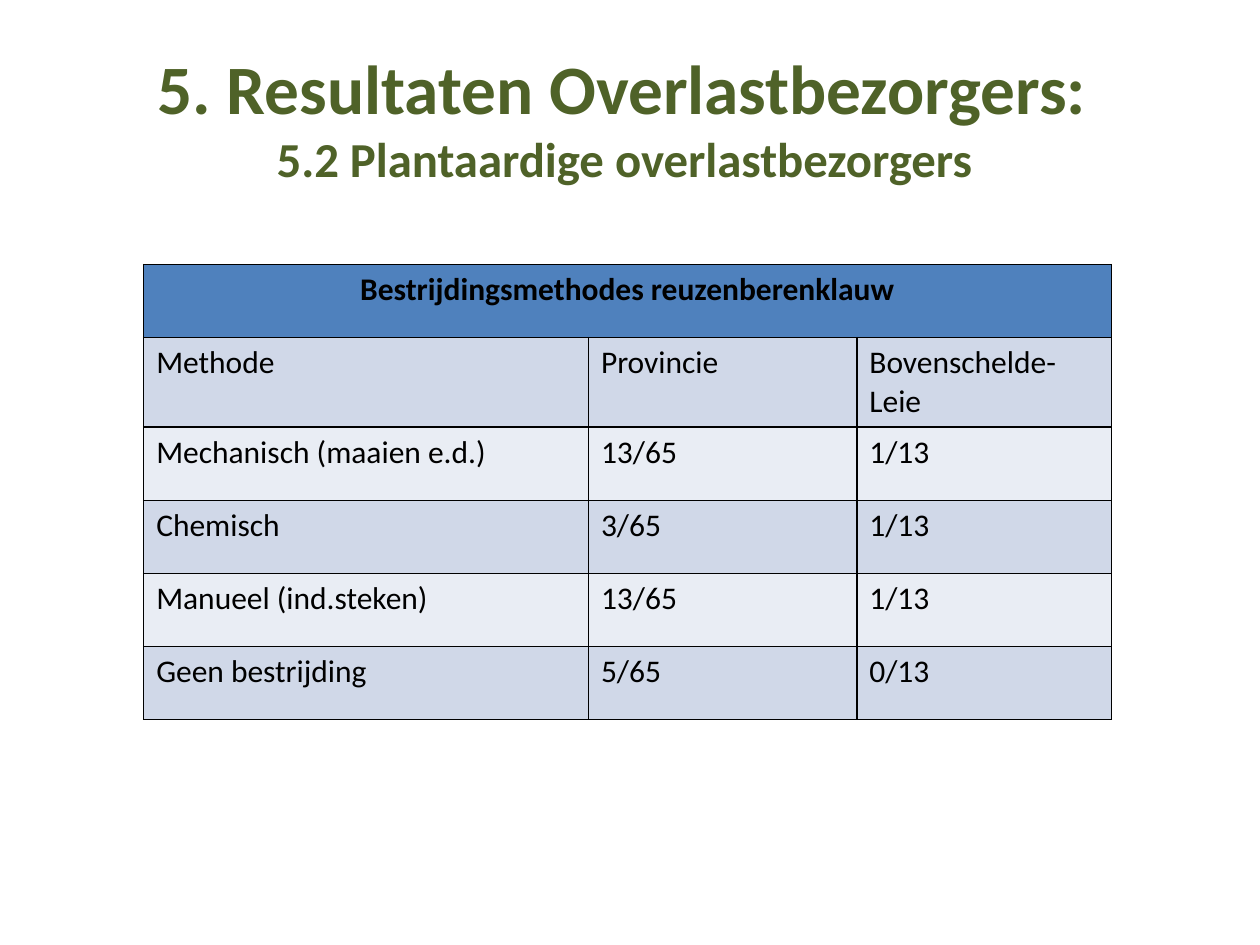
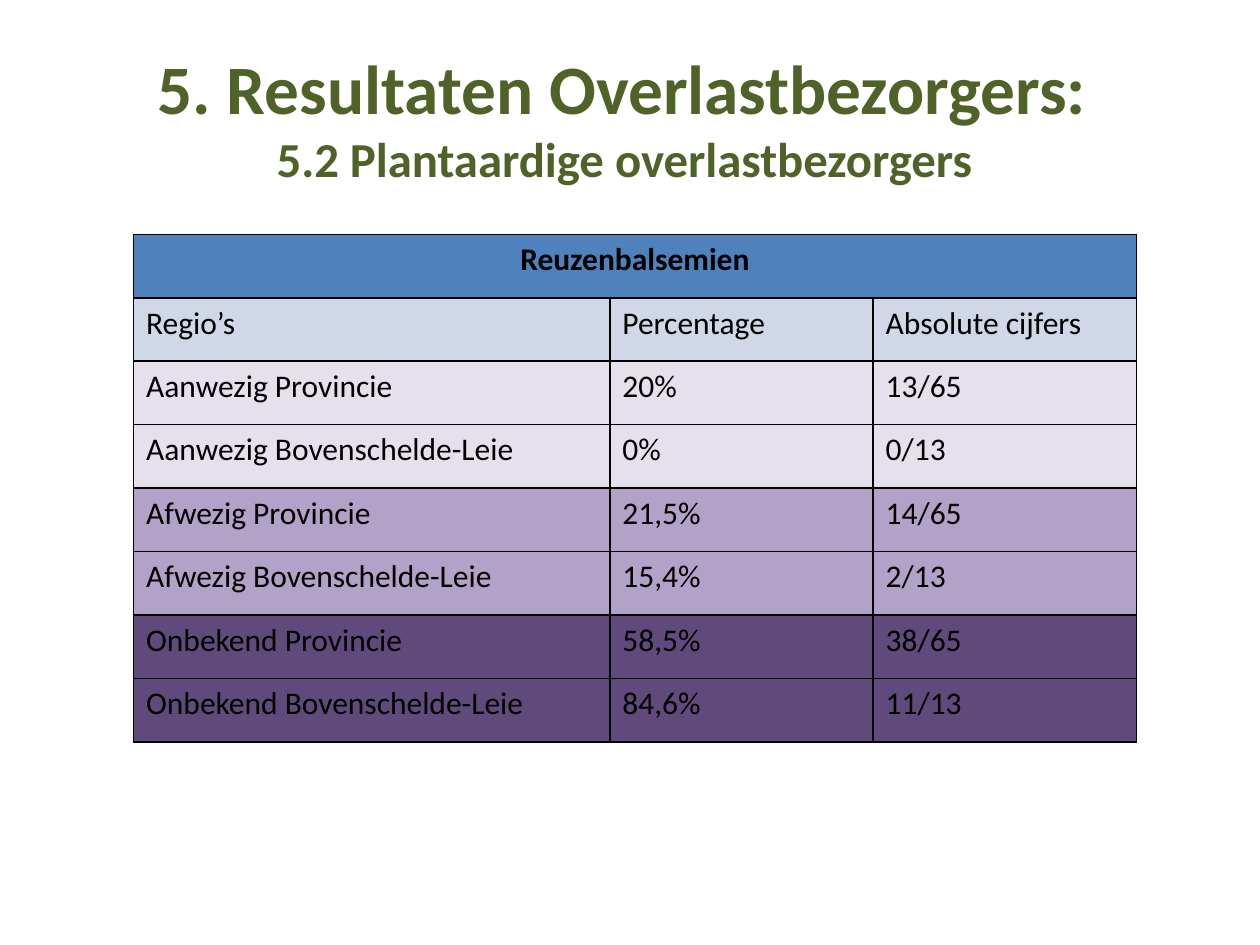
import copy

import pptx
import pptx.dml.color
import pptx.enum.text
import pptx.oxml
import pptx.oxml.ns
import pptx.util
from pptx.util import Inches

FONT = "Calibri"
BLACK = "000000"
TITLE_GREEN = "4F6228"
HEADING_BLUE = "4F81BD"
BLUE_BAND = "D0D8E8"
PALE_BAND = "E9EDF4"
PRESENT = "E6E0EC"
ABSENT = "B3A2C7"
UNKNOWN = "604A7B"
BORDER_WIDTH = pptx.util.Pt(1)


def color(hex_string):
    return pptx.dml.color.RGBColor.from_string(hex_string)


def write(paragraph, text, size=18, fill=BLACK, bold=False, align=None):
    if align is not None:
        paragraph.alignment = align
    run = paragraph.add_run()
    run.text = text
    run.font.name = FONT
    run.font.size = pptx.util.Pt(size)
    run.font.bold = bold
    run.font.color.rgb = color(fill)
    return run


class Deck:
    center = pptx.enum.text.PP_ALIGN.CENTER

    def __init__(self):
        self.presentation = pptx.Presentation()
        self.presentation.slide_width = Inches(10)
        self.presentation.slide_height = Inches(7.5)
        self.slide = None

    def new_slide(self, heading, subheading):
        layout = self.presentation.slide_layouts.get_by_name("Title Only")
        self.slide = self.presentation.slides.add_slide(layout)
        self.title(heading, subheading)

    def title(self, heading, subheading):
        title = self.slide.shapes.title
        title.left, title.top = Inches(0.5), Inches(0.3)
        title.width, title.height = Inches(9), Inches(1.25)
        frame = title.text_frame
        frame.word_wrap = True
        frame.auto_size = pptx.enum.text.MSO_AUTO_SIZE.NONE
        frame.vertical_anchor = pptx.enum.text.MSO_ANCHOR.MIDDLE
        line = frame.paragraphs[0]
        style = {"fill": TITLE_GREEN, "bold": True, "align": self.center}
        first = write(line, heading, size=39.6, **style)
        line.add_line_break()
        line_break = line._p.find(pptx.oxml.ns.qn("a:br"))
        line_break.append(copy.deepcopy(first.font._element))
        write(line, subheading, size=27.9, **style)

    def border(self, cell):
        properties = cell._tc.get_or_add_tcPr()
        for position, side in enumerate(("lnL", "lnR", "lnT", "lnB")):
            properties.insert(position, pptx.oxml.parse_xml(
                f'<a:{side} {pptx.oxml.ns.nsdecls("a")} w="{BORDER_WIDTH}">'
                f'<a:solidFill><a:srgbClr val="{BLACK}"/></a:solidFill></a:{side}>'))

    def table(self, heading, rows, fills, left, top, column_widths, row_height):
        contents = [(heading, "", "")] + rows
        table = self.slide.shapes.add_table(
            len(contents), len(column_widths), Inches(left), Inches(top),
            Inches(sum(column_widths)), Inches(row_height * len(contents))).table
        for column, width in zip(table.columns, column_widths):
            column.width = Inches(width)
        for row, values, fill in zip(table.rows, contents, [HEADING_BLUE] + fills):
            row.height = Inches(row_height)
            is_heading = values is contents[0]
            for cell, value in zip(row.cells, values):
                cell.fill.solid()
                cell.fill.fore_color.rgb = color(fill)
                self.border(cell)
                if value:
                    write(cell.text_frame.paragraphs[0], value, bold=is_heading,
                          align=self.center if is_heading else None)
        table.cell(0, 0).merge(table.cell(0, len(column_widths) - 1))


def main():
    deck = Deck()
    chapter = ("5. Resultaten Overlastbezorgers: ",
               "5.2 Plantaardige overlastbezorgers ")

    deck.new_slide(*chapter)
    control_methods = [
        ("Methode", "Provincie", "Bovenschelde-Leie"),
        ("Mechanisch (maaien e.d.)", "13/65", "1/13"),
        ("Chemisch", "3/65", "1/13"),
        ("Manueel (ind.steken)", "13/65", "1/13"),
        ("Geen bestrijding", "5/65", "0/13"),
    ]
    alternating = [(BLUE_BAND, PALE_BAND)[index % 2]
                   for index in range(len(control_methods))]
    deck.table("Bestrijdingsmethodes reuzenberenklauw", control_methods, alternating,
               left=1.14, top=2.1, column_widths=(3.53, 2.13, 2.02), row_height=0.58)

    deck.new_slide(*chapter)
    balsam_presence = [
        ("Regio’s", "Percentage", "Absolute cijfers"),
        ("Aanwezig Provincie", "20%", "13/65"),
        ("Aanwezig Bovenschelde-Leie", "0%", "0/13"),
        ("Afwezig Provincie", "21,5%", "14/65"),
        ("Afwezig Bovenschelde-Leie", "15,4%", "2/13"),
        ("Onbekend Provincie", "58,5%", "38/65"),
        ("Onbekend Bovenschelde-Leie", "84,6%", "11/13"),
    ]
    status_pairs = [fill for fill in (PRESENT, ABSENT, UNKNOWN) for _ in range(2)]
    deck.table("Reuzenbalsemien", balsam_presence, [BLUE_BAND] + status_pairs,
               left=1.06, top=1.86, column_widths=(3.78, 2.09, 2.09),
               row_height=4.03 / 8)

    deck.presentation.save("out.pptx")


if __name__ == "__main__":
    main()
